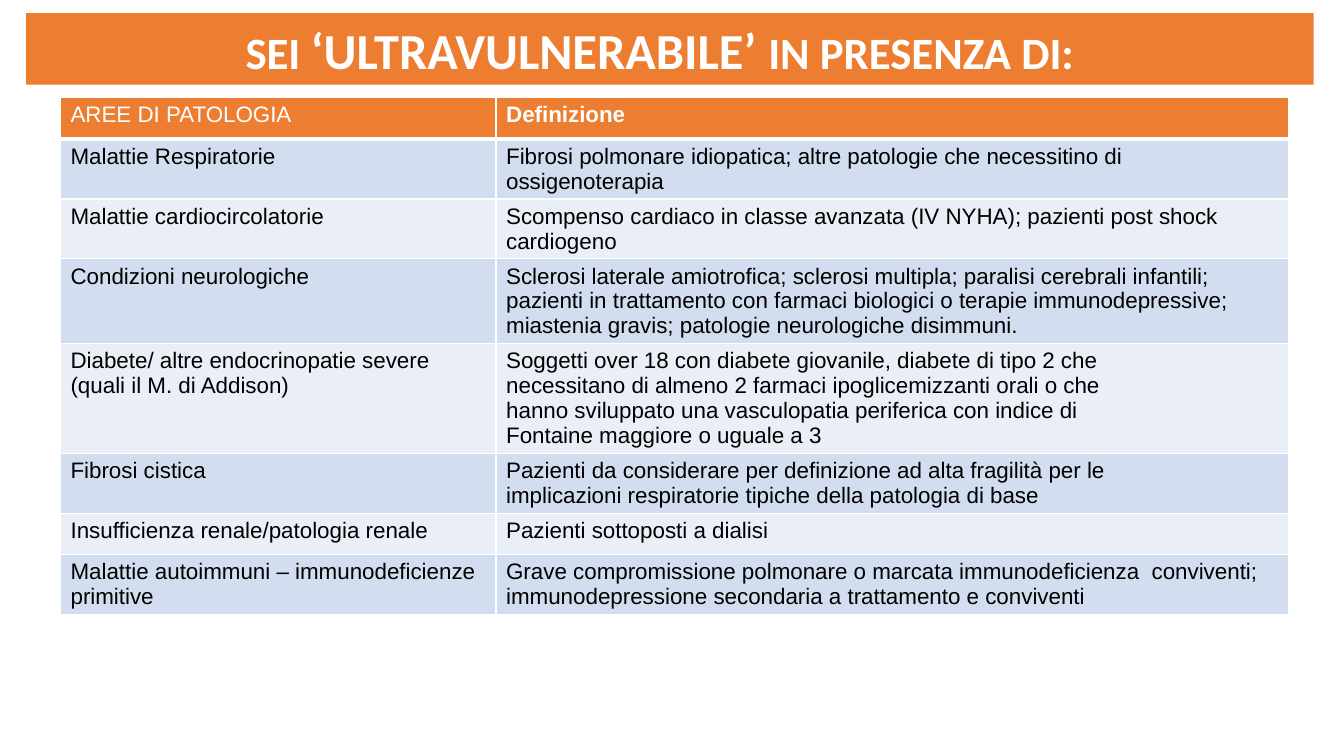
from dataclasses import dataclass

from lxml import etree
from pptx import Presentation
from pptx.dml.color import RGBColor
from pptx.enum.text import MSO_ANCHOR, MSO_AUTO_SIZE, PP_ALIGN
from pptx.oxml.ns import qn
from pptx.util import Inches, Length, Pt

ORANGE = RGBColor(0xED, 0x7D, 0x31)
BLUE_BAND = RGBColor(0xD2, 0xDE, 0xEF)
PALE_BAND = RGBColor(0xEA, 0xEF, 0xF7)
WHITE = RGBColor(0xFF, 0xFF, 0xFF)
BLACK = RGBColor(0x00, 0x00, 0x00)

CENTER = PP_ALIGN.CENTER
MIDDLE = MSO_ANCHOR.MIDDLE
NO_AUTOFIT = MSO_AUTO_SIZE.NONE

SLIDE_WIDTH, SLIDE_HEIGHT = Inches(13.33), Inches(7.5)
TITLE_ONLY = 5


@dataclass(frozen=True)
class TitlePart:
    text: str
    size: int


@dataclass(frozen=True)
class Condition:
    area: str
    definition: str


TITLE_PARTS = [
    TitlePart("SEI ", 32),
    TitlePart("‘ULTRAVULNERABILE’ ", 36),
    TitlePart("IN PRESENZA DI:", 32),
]

HEADING = Condition("AREE DI PATOLOGIA", "Definizione")
CONDITIONS = [
    Condition("Malattie Respiratorie",
              "Fibrosi polmonare idiopatica; altre patologie che necessitino di ossigenoterapia"),
    Condition("Malattie cardiocircolatorie",
              "Scompenso cardiaco in classe avanzata (IV NYHA); pazienti post shock cardiogeno"),
    Condition("Condizioni neurologiche",
              "Sclerosi laterale amiotrofica; sclerosi multipla; paralisi cerebrali infantili; "
              "pazienti in trattamento con farmaci biologici o terapie immunodepressive; "
              "miastenia gravis; patologie neurologiche disimmuni."),
    Condition("Diabete/ altre endocrinopatie severe (quali il M. di Addison)",
              "Soggetti over 18 con diabete giovanile, diabete di tipo 2 che\n"
              "necessitano di almeno 2 farmaci ipoglicemizzanti orali o che\n"
              "hanno sviluppato una vasculopatia periferica con indice di\n"
              "Fontaine maggiore o uguale a 3"),
    Condition("Fibrosi cistica",
              "Pazienti da considerare per definizione ad alta fragilità per le\n"
              "implicazioni respiratorie tipiche della patologia di base"),
    Condition("Insufficienza renale/patologia renale", "Pazienti sottoposti a dialisi"),
    Condition("Malattie autoimmuni – immunodeficienze\nprimitive",
              "Grave compromissione polmonare o marcata immunodeficienza  conviventi; "
              "immunodepressione secondaria a trattamento e conviventi"),
]


def across(percent: float) -> Length:
    return Length(round(SLIDE_WIDTH * percent / 100))


def down(percent: float) -> Length:
    return Length(round(SLIDE_HEIGHT * percent / 100))


def apply_format(target, values: dict) -> None:
    for attribute, value in values.items():
        setattr(target, attribute, value)


def format_font(font, name: str, size: int, bold: bool, color: RGBColor) -> None:
    apply_format(font, {"name": name, "size": Pt(size), "bold": bold})
    font.color.rgb = color


def add_title(slide) -> None:
    title = slide.shapes.title
    apply_format(title, {"left": across(1.95), "top": down(1.73),
                         "width": across(95.8), "height": down(9.47)})
    title.fill.solid()
    title.fill.fore_color.rgb = ORANGE
    # The wider right inset sets the heading slightly left of centre.
    apply_format(title.text_frame, {
        "word_wrap": True, "auto_size": NO_AUTOFIT, "vertical_anchor": MIDDLE,
        "margin_left": Inches(0.1), "margin_right": Inches(0.3),
        "margin_top": Inches(0.05), "margin_bottom": Inches(0.05)})
    heading = title.text_frame.paragraphs[0]
    heading.alignment = CENTER
    for part in TITLE_PARTS:
        run = heading.add_run()
        run.text = part.text
        format_font(run.font, "Calibri", part.size, True, WHITE)


def add_borders(cell, bottom_width: int) -> None:
    """Draw white cell borders; the schema wants them ahead of the fill."""
    properties = cell._tc.get_or_add_tcPr()
    widths = {"a:lnL": 1, "a:lnR": 1, "a:lnT": 1, "a:lnB": bottom_width}
    for position, (side, width) in enumerate(widths.items()):
        line = etree.Element(qn(side), w=str(Pt(width)))
        fill = etree.SubElement(line, qn("a:solidFill"))
        etree.SubElement(fill, qn("a:srgbClr"), val=str(WHITE))
        properties.insert(position, line)


def fill_cell(cell, text: str, fill: RGBColor, color: RGBColor,
              bold: bool, bottom_width: int) -> None:
    cell.text = text
    cell.fill.solid()
    cell.fill.fore_color.rgb = fill
    for paragraph in cell.text_frame.paragraphs:
        for run in paragraph.runs:
            format_font(run.font, "Arial", 16, bold, color)
    add_borders(cell, bottom_width)


def add_conditions_table(slide) -> None:
    column_shares = (32.41, 58.96)
    row_share = 5.47
    entries = [HEADING, *CONDITIONS]
    table = slide.shapes.add_table(
        len(entries), len(column_shares), across(4.5), down(12.93),
        across(sum(column_shares)), down(row_share * len(entries))).table
    for column, share in zip(table.columns, column_shares):
        column.width = across(share)
    for index, entry in enumerate(entries):
        table.rows[index].height = down(row_share)
        is_heading = index == 0
        band = BLUE_BAND if index % 2 else PALE_BAND
        fill, color, bottom = (ORANGE, WHITE, 3) if is_heading else (band, BLACK, 1)
        fill_cell(table.cell(index, 0), entry.area, fill, color, False, bottom)
        fill_cell(table.cell(index, 1), entry.definition, fill, color, is_heading, bottom)


def main() -> None:
    presentation = Presentation()
    apply_format(presentation, {"slide_width": SLIDE_WIDTH, "slide_height": SLIDE_HEIGHT})
    slide = presentation.slides.add_slide(presentation.slide_layouts[TITLE_ONLY])
    add_conditions_table(slide)
    add_title(slide)
    presentation.save("out.pptx")


if __name__ == "__main__":
    main()
